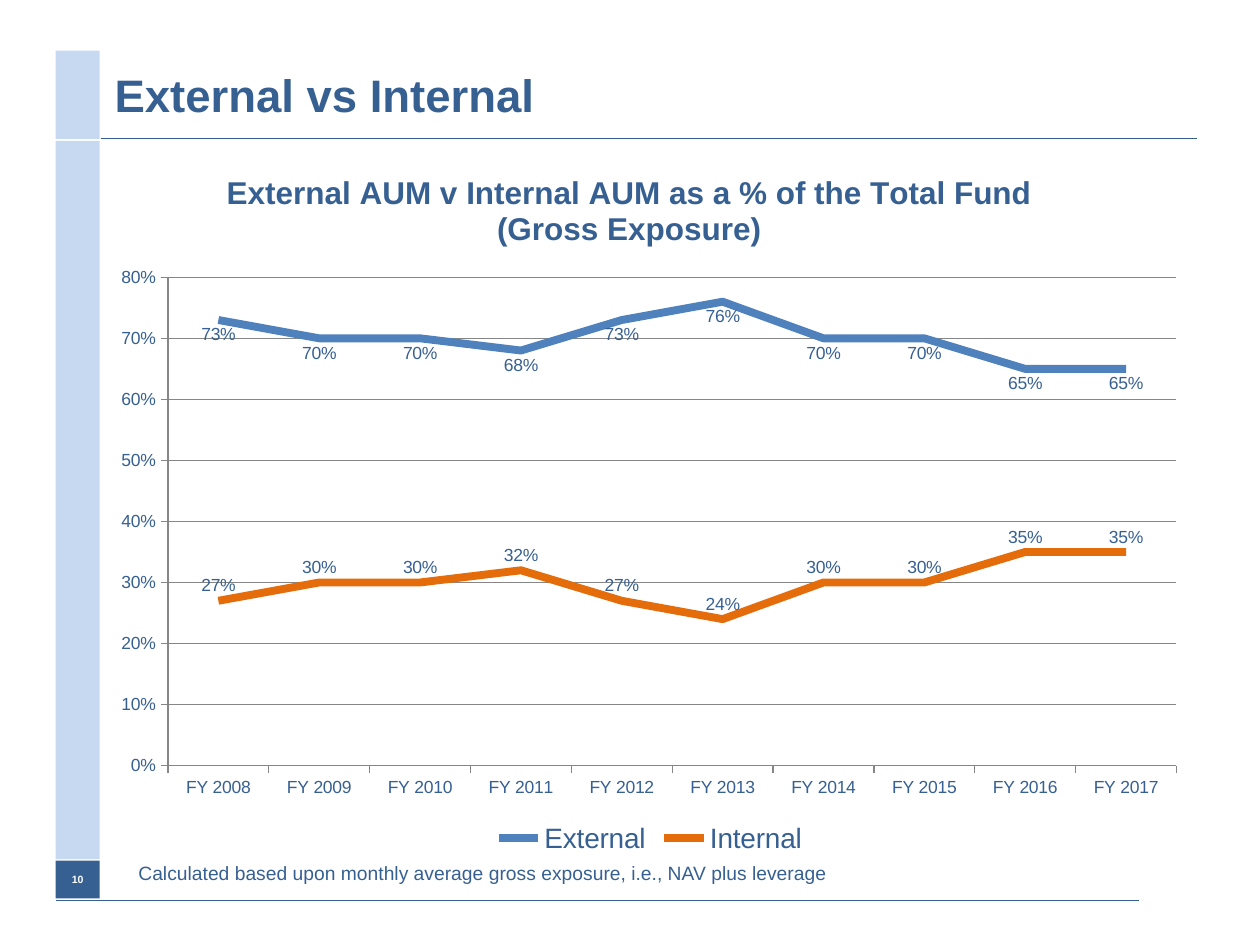
import pptx
import pptx.chart.data
import pptx.dml.color
import pptx.enum.chart
import pptx.enum.shapes
import pptx.enum.text
import pptx.oxml
import pptx.oxml.ns
import pptx.util
from pptx.util import Cm

NAVY, PALE, WHITE, GREY = "376092", "C6D9F1", "FFFFFF", "868686"
BLUE, ORANGE = "4F81BD", "E46C0A"
FONT = "Arial"
BAR_LEFT, BAR_WIDTH = 1.12, 0.89
BODY_LEFT, BODY_TOP, BODY_WIDTH, BODY_HEIGHT = 2.06, 2.84, 22.1, 14.48


def color(value):
    return pptx.dml.color.RGBColor.from_string(value)


def style_font(font, size, value=NAVY, bold=False):
    font.name = FONT
    font.size = pptx.util.Pt(size)
    font.bold = bold
    font.color.rgb = color(value)


def style_line(line, value, width):
    line.color.rgb = color(value)
    line.width = pptx.util.Pt(width)


def add_run(paragraph, text, size, value=NAVY, bold=False):
    run = paragraph.add_run()
    run.text = text
    style_font(run.font, size, value, bold)


def add_bar(slide, top, height, fill):
    bar = slide.shapes.add_shape(
        pptx.enum.shapes.MSO_SHAPE.RECTANGLE,
        Cm(BAR_LEFT), Cm(top), Cm(BAR_WIDTH), Cm(height))
    bar.shadow.inherit = False
    bar.fill.solid()
    bar.fill.fore_color.rgb = color(fill)
    bar.line.fill.background()
    return bar


def add_rule(slide, left, right, y, width):
    rule = slide.shapes.add_connector(
        pptx.enum.shapes.MSO_CONNECTOR.STRAIGHT, Cm(left), Cm(y), Cm(right), Cm(y))
    style_line(rule.line, NAVY, width)
    rule._element.spPr.append(pptx.oxml.parse_xml(
        "<a:effectLst %s/>" % pptx.oxml.ns.nsdecls("a")))


def add_text(slide, left, top, width, height, text, size, bold=False):
    box = slide.shapes.add_textbox(Cm(left), Cm(top), Cm(width), Cm(height))
    frame = box.text_frame
    frame.word_wrap = True
    frame.vertical_anchor = pptx.enum.text.MSO_ANCHOR.MIDDLE
    add_run(frame.paragraphs[0], text, size, bold=bold)


def add_frame(slide, page):
    """Draw the side bars, the two rules and the page number."""
    add_rule(slide, BAR_LEFT, 22.96, 18.16, 0.75)
    add_bar(slide, BODY_TOP, BODY_HEIGHT, PALE)
    add_bar(slide, 1.02, 1.78, PALE)
    add_rule(slide, 2.03, 24.13, 2.79, 1)
    number = add_bar(slide, 17.35, 0.76, NAVY).text_frame
    number.margin_left = number.margin_right = 0
    number.margin_top = number.margin_bottom = 0
    number.vertical_anchor = pptx.enum.text.MSO_ANCHOR.MIDDLE
    paragraph = number.paragraphs[0]
    paragraph.alignment = pptx.enum.text.PP_ALIGN.CENTER
    add_run(paragraph, page, 6, WHITE, True)


def set_layout(parent, x, y, w=None, h=None):
    """Place a chart part by fractions of the chart; with a size, as the inner plot."""
    parts = [("xMode", "edge"), ("yMode", "edge"), ("x", x), ("y", y)]
    if w is not None:
        parts = [("layoutTarget", "inner")] + parts + [("w", w), ("h", h)]
    for old in parent.findall(pptx.oxml.ns.qn("c:layout")):
        parent.remove(old)
    layout = pptx.oxml.parse_xml(
        "<c:layout %s><c:manualLayout>%s</c:manualLayout></c:layout>" % (
            pptx.oxml.ns.nsdecls("c"),
            "".join('<c:%s val="%s"/>' % part for part in parts)))
    text = parent.find(pptx.oxml.ns.qn("c:tx"))
    parent.insert(0 if text is None else 1, layout)


def style_series(series, value, position):
    series.smooth = False
    style_line(series.format.line, value, 4.5)
    series.marker.style = pptx.enum.chart.XL_MARKER_STYLE.NONE
    labels = series.data_labels
    labels.show_value = True
    labels.number_format = "0%"
    labels.number_format_is_linked = False
    labels.position = position
    style_font(labels.font, 10)


def style_axes(chart):
    for axis in (chart.category_axis, chart.value_axis):
        style_font(axis.tick_labels.font, 10)
        style_line(axis.format.line, GREY, 0.75)
        axis.major_tick_mark = pptx.enum.chart.XL_TICK_MARK.OUTSIDE
    shares = chart.value_axis
    shares.minimum_scale, shares.maximum_scale, shares.major_unit = 0, 0.8, 0.1
    shares.tick_labels.number_format = "0%"
    shares.tick_labels.number_format_is_linked = False
    shares.has_major_gridlines = True
    style_line(shares.major_gridlines.format.line, GREY, 0.75)


def add_aum_chart(slide, left, top, width, height):
    data = pptx.chart.data.CategoryChartData(number_format="0%")
    data.categories = ["FY %d" % year for year in range(2008, 2018)]
    data.add_series("External", [0.73, 0.7, 0.7, 0.68, 0.73, 0.76, 0.7, 0.7, 0.65, 0.65])
    data.add_series("Internal", [0.27, 0.3, 0.3, 0.32, 0.27, 0.24, 0.3, 0.3, 0.35, 0.35])
    chart = slide.shapes.add_chart(
        pptx.enum.chart.XL_CHART_TYPE.LINE,
        Cm(left), Cm(top), Cm(width), Cm(height), data).chart
    style_font(chart.font, 10)

    chart.has_title = True
    title = chart.chart_title
    title.include_in_layout = False
    add_run(title.text_frame.paragraphs[0],
            "External AUM v Internal AUM as a % of the Total Fund", 18, bold=True)
    add_run(title.text_frame.add_paragraph(), "(Gross Exposure)", 18, bold=True)
    set_layout(title._element, 0.11, 0.04)

    plot = chart.plots[0]
    plot.vary_by_categories = False
    set_layout(chart._chartSpace.chart.plotArea, 0.06, 0.19, 0.92, 0.68)
    position = pptx.enum.chart.XL_LABEL_POSITION
    external, internal = plot.series
    style_series(external, BLUE, position.BELOW)
    style_series(internal, ORANGE, position.ABOVE)
    style_axes(chart)

    chart.has_legend = True
    chart.legend.position = pptx.enum.chart.XL_LEGEND_POSITION.BOTTOM
    chart.legend.include_in_layout = False
    style_font(chart.legend.font, 16)


def main():
    deck = pptx.Presentation()
    deck.slide_width, deck.slide_height = Cm(25.4), Cm(19.05)
    slide = deck.slides.add_slide(deck.slide_layouts[6])
    add_frame(slide, "10")
    add_text(slide, BODY_LEFT, 1.02, 22.07, 1.78, "External vs Internal", 26, True)
    add_text(slide, 2.54, 17.09, 20.32, 1.02,
             "Calculated based upon monthly average gross exposure, i.e., NAV plus leverage", 11)
    add_aum_chart(slide, BODY_LEFT, BODY_TOP, BODY_WIDTH, BODY_HEIGHT)
    deck.save("out.pptx")


if __name__ == "__main__":
    main()
